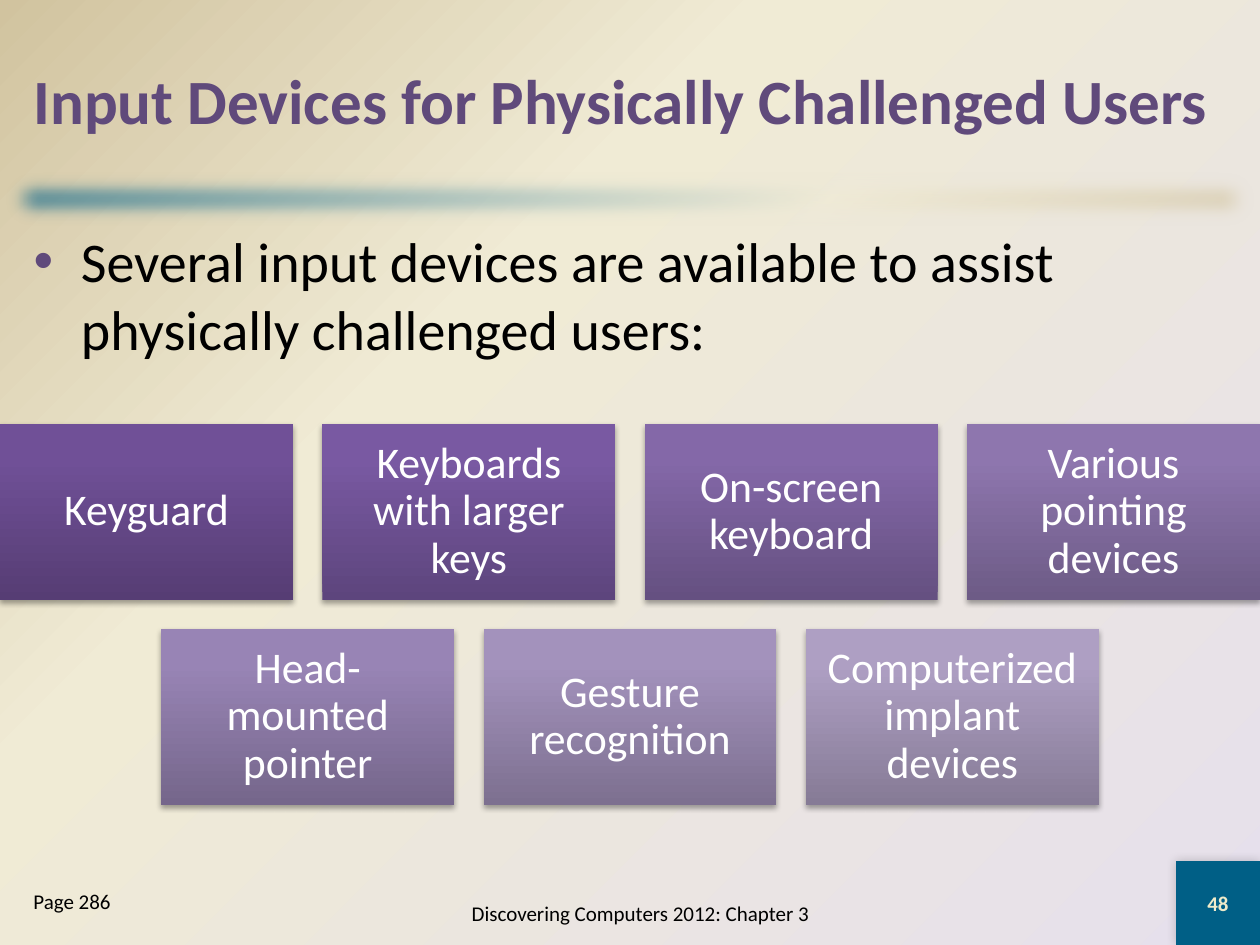
from lxml.etree import SubElement
from pptx import Presentation
from pptx.dml.color import RGBColor
from pptx.enum.shapes import MSO_SHAPE
from pptx.enum.text import MSO_ANCHOR as Anchor, MSO_AUTO_SIZE, PP_ALIGN as Align
from pptx.oxml import parse_xml
from pptx.oxml.ns import nsdecls, qn
from pptx.util import Pt

WIDTH, HEIGHT = 720, 540
FONT = "Calibri"
COLORS = {"purple": "604A7B", "black": "000000", "white": "FFFFFF", "teal": "005F86",
          "cream": "F0EBD5", "tan": "D1C39F", "lavender": "E6E0EC", "number": "EEEBCA"}

TITLE = "Input Devices for Physically Challenged Users"
INTRO = "Several input devices are available to assist physically challenged users:"
PAGE = "Page 286"
FOOTER = "Discovering Computers 2012: Chapter 3"
NUMBER = "48"
# Each device: label, then gradient colors from bottom to top
DEVICE_ROWS = [
    [("Keyguard", ("563D74", "705097", "704F99")),
     ("Keyboards with larger keys", ("5D457D", "7959A2", "7A58A4")),
     ("On-screen keyboard", ("655081", "8468A8", "8467AA")),
     ("Various pointing devices", ("6D5B86", "8E76AE", "8E75B0"))],
    [("Head-mounted pointer", ("75668B", "9884B5", "9984B7")),
     ("Gesture recognition", ("7D7090", "A392BC", "A492BD")),
     ("Computerized implant devices", ("867B96", "AE9FC3", "AE9FC4"))],
]
# Four boxes and three gaps fill the slide width; a gap is a tenth of a box
BOX_WIDTH = WIDTH / 4.3
BOX_HEIGHT = 0.6 * BOX_WIDTH
GAP = 0.1 * BOX_WIDTH
GRID_TOP = 242.2
LINEAR = '<a:lin ang="{}" scaled="0"/>'
CORNER = '<a:path path="circle"><a:fillToRect l="100000" t="100000"/></a:path>'


def set_gradient(fill, parent, colors, middle, direction):
    """Fill with three colors, the second at middle percent; parent is the XML owner of the fill."""
    stops = "".join(f'<a:gs pos="{position * 1000}"><a:srgbClr val="{color}"/></a:gs>'
                    for position, color in zip((0, middle, 100), colors))
    fill.solid()
    parent.replace(parent.find(qn("a:solidFill")), parse_xml(
        f'<a:gradFill {nsdecls("a")} rotWithShape="1"><a:gsLst>{stops}</a:gsLst>{direction}</a:gradFill>'))


def add_effect(shape, name, **attributes):
    effects = shape.element.spPr.find(qn("a:effectLst"))
    return SubElement(effects, qn(name), {key: str(value) for key, value in attributes.items()})


def add_shadow(shape, opacity, blur, distance, angle):
    shadow = add_effect(shape, "a:outerShdw", blurRad=Pt(blur), dist=Pt(distance),
                        dir=angle * 60000, algn="ctr", rotWithShape=0)
    color = SubElement(shadow, qn("a:srgbClr"), val=COLORS["black"])
    SubElement(color, qn("a:alpha"), val=str(opacity * 1000))


def add_rectangle(slide, *bounds):
    shape = slide.shapes.add_shape(MSO_SHAPE.RECTANGLE, *map(Pt, bounds))
    shape.shadow.inherit = False
    shape.line.fill.background()
    return shape


def place(shape, *bounds):
    shape.left, shape.top, shape.width, shape.height = map(Pt, bounds)


def write(shape, text, size, color, align=Align.LEFT, anchor=Anchor.MIDDLE, bold=False):
    frame = shape.text_frame
    frame.text = text
    frame.word_wrap = True
    frame.auto_size = MSO_AUTO_SIZE.NONE
    frame.vertical_anchor = anchor
    paragraph = frame.paragraphs[0]
    paragraph.alignment = align
    paragraph.space_before = Pt(0)
    font = paragraph.runs[0].font
    font.name, font.size, font.bold = FONT, Pt(size), bold
    font.color.rgb = RGBColor.from_string(COLORS[color])
    return paragraph


def add_bullet(paragraph, indent):
    properties = paragraph._p.get_or_add_pPr()
    properties.set("marL", str(Pt(indent)))
    properties.set("indent", str(-Pt(indent)))
    color = SubElement(properties, qn("a:buClr"))
    SubElement(color, qn("a:srgbClr"), val=COLORS["purple"])
    SubElement(properties, qn("a:buFont"), typeface="Arial")
    SubElement(properties, qn("a:buChar"), char="•")


def add_devices(slide):
    for row, devices in enumerate(DEVICE_ROWS):
        row_width = len(devices) * (BOX_WIDTH + GAP) - GAP
        for column, (label, colors) in enumerate(devices):
            left = (WIDTH - row_width) / 2 + column * (BOX_WIDTH + GAP)
            top = GRID_TOP + row * (BOX_HEIGHT + GAP)
            box = add_rectangle(slide, left, top, BOX_WIDTH, BOX_HEIGHT)
            set_gradient(box.fill, box.element.spPr, colors, 80, LINEAR.format(270 * 60000))
            add_shadow(box, 35, 3.1, 1.8, 90)
            write(box, label, 25, "white", Align.CENTER).line_spacing = 0.9
            frame = box.text_frame
            frame.margin_top = frame.margin_bottom = Pt(7.2)


def main():
    presentation = Presentation()
    presentation.slide_width, presentation.slide_height = Pt(WIDTH), Pt(HEIGHT)
    slide = presentation.slides.add_slide(presentation.slide_layouts[1])

    background = slide.background.fill
    background.solid()
    set_gradient(background, slide.element.find(".//" + qn("p:bgPr")),
                 [COLORS[name] for name in ("lavender", "cream", "tan")], 65, CORNER)

    bar = add_rectangle(slide, 0, 96, WIDTH, 36)
    set_gradient(bar.fill, bar.element.spPr,
                 [COLORS[name] for name in ("teal", "cream", "tan")], 65, LINEAR.format(45 * 60000))
    add_effect(bar, "a:softEdge", rad=Pt(12.5))

    title, body = slide.placeholders
    place(title, 12, 12, 696, 90)
    write(title, TITLE, 36, "purple", bold=True)
    place(body, 12, 126, 696, 366)
    add_bullet(write(body, INTRO, 32, "black", anchor=Anchor.TOP), 27)

    footer = slide.shapes.add_textbox(Pt(216), Pt(504), Pt(300), Pt(36))
    write(footer, FOOTER, 12, "black", Align.CENTER)
    page = slide.shapes.add_textbox(Pt(12), Pt(504), Pt(132), Pt(36))
    write(page, PAGE, 12, "black", anchor=Anchor.TOP)

    number = add_rectangle(slide, WIDTH - 48, HEIGHT - 48, 48, 48)
    number.fill.solid()
    number.fill.fore_color.rgb = RGBColor.from_string(COLORS["teal"])
    add_shadow(number, 20, 6, 0, 225)
    write(number, NUMBER, 12, "number", Align.CENTER, bold=True)

    add_devices(slide)
    presentation.save("out.pptx")


if __name__ == "__main__":
    main()
